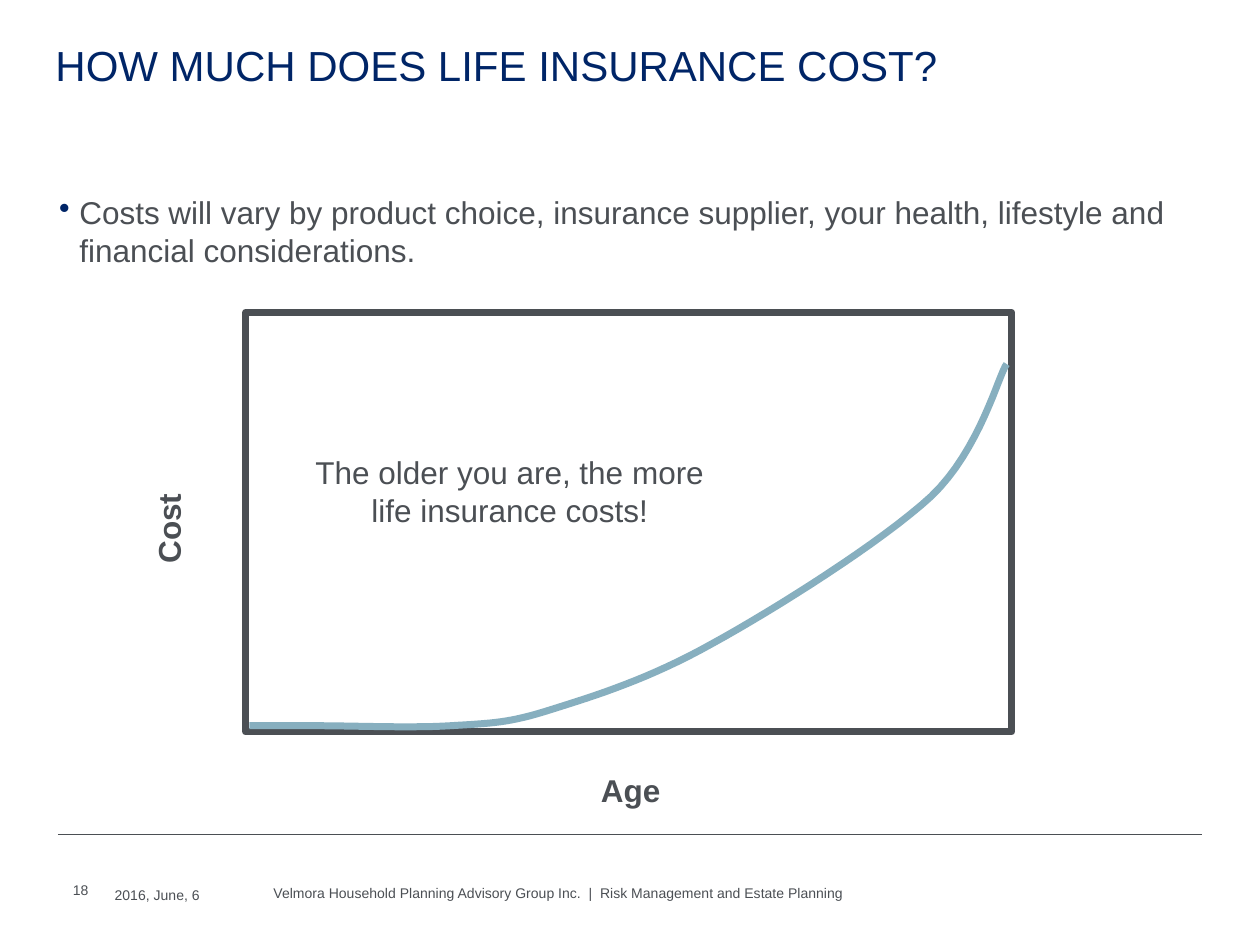
from lxml import etree
from pptx import Presentation, util as u
from pptx.dml.color import RGBColor
from pptx.enum import shapes, text
from pptx.oxml import ns

THEME = dict(
    font="Arial", navy="002567", slate="4B4F54", blue="87AFBF",
    title=24, body=18, footer=8, hairline=0.5, heavy=4,
)

deck = Presentation()
deck.slide_width, deck.slide_height = u.Inches(10), u.Inches(7.5)
COL, ROW = deck.slide_width / 100, deck.slide_height / 75
slide = deck.slides.add_slide(deck.slide_layouts[6])


def place(left, top, width, height):
    return round(left * COL), round(top * ROW), round(width * COL), round(height * ROW)


def write(cells, lines, size, color="slate", bold=False, inset=True, wrap=True,
          anchor=text.MSO_ANCHOR.TOP, align=text.PP_ALIGN.LEFT):
    box = slide.shapes.add_textbox(*place(*cells))
    frame = box.text_frame
    frame.word_wrap = wrap
    frame.vertical_anchor = anchor
    if not inset:
        frame.margin_left = frame.margin_right = frame.margin_top = frame.margin_bottom = 0
    for index, line in enumerate(lines):
        paragraph = frame.add_paragraph() if index else frame.paragraphs[0]
        paragraph.alignment = align
        run = paragraph.add_run()
        run.text = line
        run.font.name = THEME["font"]
        run.font.size = u.Pt(THEME[size])
        run.font.bold = bold
        run.font.color.rgb = RGBColor.from_string(THEME[color])
    return box


footer_rule = slide.shapes.add_connector(
    shapes.MSO_CONNECTOR.STRAIGHT,
    round(4.6 * COL), round(66.2 * ROW), round(95.4 * COL), round(66.2 * ROW))
footer_rule.line.color.rgb = RGBColor.from_string(THEME["slate"])
footer_rule.line.width = u.Pt(THEME["hairline"])
etree.SubElement(footer_rule._element.spPr, ns.qn("a:effectLst"))

write((4.4, 3.1, 90.9, 4), ["HOW MUCH DOES LIFE INSURANCE COST?"], "title", "navy", inset=False)

costs = write((4.7, 15.3, 90.6, 9), [
    "Costs will vary by product choice, insurance supplier, your health, lifestyle and "
    "financial considerations."], "body", inset=False).text_frame.paragraphs[0]
costs.space_after = u.Pt(12)
bullet = costs._p.get_or_add_pPr()
bullet.set("marL", str(u.Inches(0.16)))
bullet.set("indent", str(-u.Inches(0.16)))
bullet_color = etree.SubElement(bullet, ns.qn("a:buClr"))
etree.SubElement(bullet_color, ns.qn("a:srgbClr"), val=THEME["navy"])
etree.SubElement(bullet, ns.qn("a:buChar"), char="•")

write((9.1, 69.5, 11.8, 2.2), ["2016, June, 6"], "footer", inset=False,
      anchor=text.MSO_ANCHOR.BOTTOM)
write((4.8, 69.5, 3.6, 2.2), ["18"], "footer")
write((21.7, 69.7, 55.1, 2.3),
      ["Velmora Household Planning Advisory Group Inc.  |  Risk Management and Estate Planning"],
      "footer", inset=False, anchor=text.MSO_ANCHOR.MIDDLE)

plot = slide.shapes.add_shape(shapes.MSO_SHAPE.RECTANGLE, *place(19.5, 24.8, 60.8, 33.3))

start = (19.8, 57.6)
bends = [
    ((21.1, 57.6), (22.5, 57.6), (25.1, 57.6)),
    ((27.8, 57.6), (32.7, 57.8), (35.8, 57.6)),
    ((39, 57.4), (40.4, 57.4), (43.8, 56.3)),
    ((47.3, 55.2), (51.5, 53.9), (56.5, 51.1)),
    ((61.6, 48.3), (70, 43), (73.9, 39.4)),
    ((77.8, 35.7), (79.3, 29.6), (79.9, 28.9)),
]
STEPS = 16
points = []
corner = start
for bend in bends:
    for step in range(1, STEPS + 1):
        t = step / STEPS
        weights = ((1 - t) ** 3, 3 * t * (1 - t) ** 2, 3 * t ** 2 * (1 - t), t ** 3)
        x, y = (sum(w * p[axis] for w, p in zip(weights, (corner, *bend))) for axis in (0, 1))
        points.append((x * COL, y * ROW))
    corner = bend[-1]
builder = slide.shapes.build_freeform(start[0] * COL, start[1] * ROW)
builder.add_line_segments(points, close=False)
cost_curve = builder.convert_to_shape()

for outline, color in ((plot, "slate"), (cost_curve, "blue")):
    outline.shadow.inherit = False
    outline.fill.background()
    outline.line.color.rgb = RGBColor.from_string(THEME[color])
    outline.line.width = u.Pt(THEME["heavy"])

centred = dict(size="body", wrap=False, anchor=text.MSO_ANCHOR.MIDDLE, align=text.PP_ALIGN.CENTER)
write((23.9, 33.3, 33.1, 11.3), ["The older you are, the more", "life insurance costs!"], **centred)
cost_axis = write((-3.2, 39.8, 33.1, 4.3), ["Cost"], bold=True, **centred)
cost_axis.rotation = 270
write((33.5, 60.6, 33.1, 4.2), ["Age"], bold=True, **centred)

deck.save("out.pptx")
